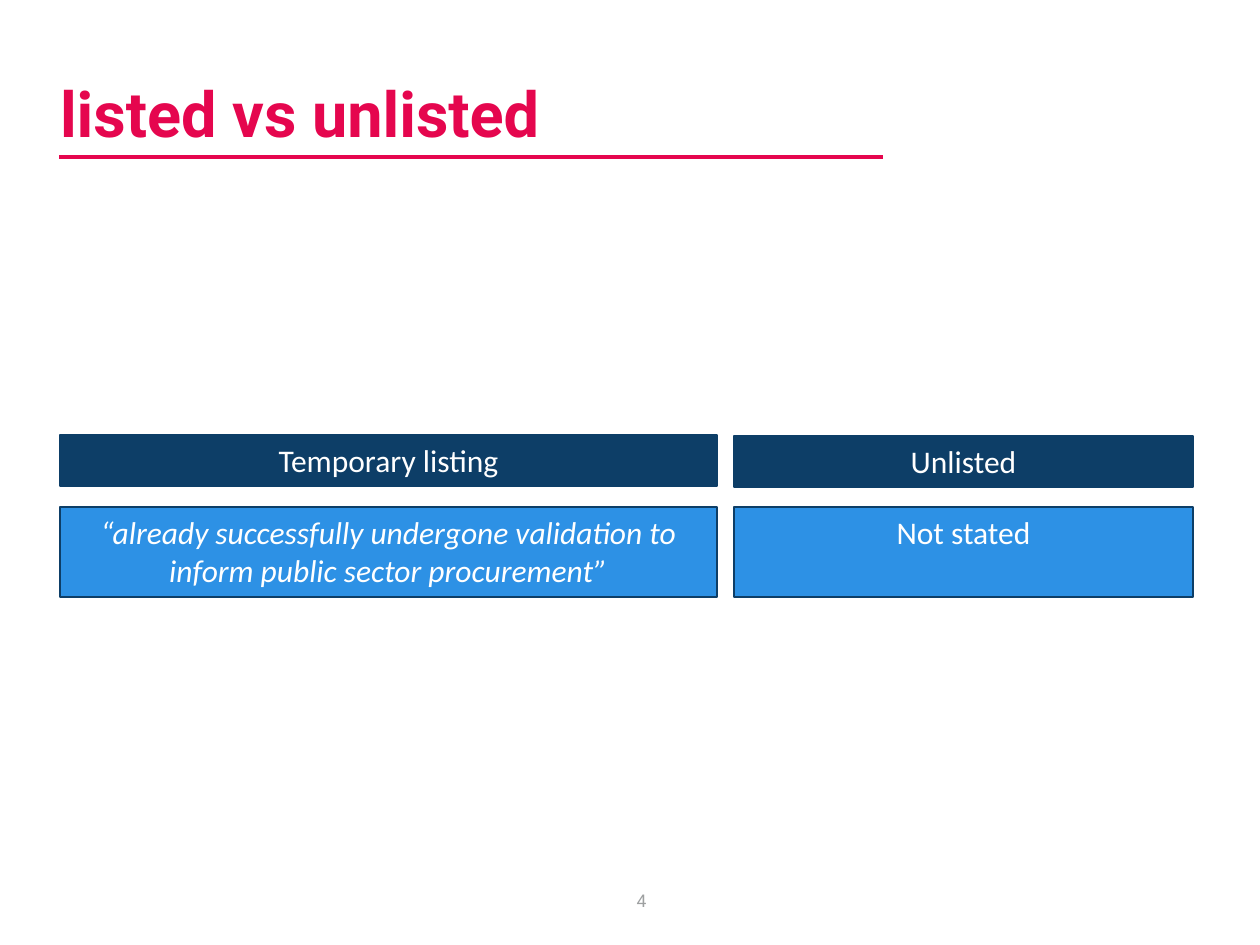
from dataclasses import dataclass

import pptx
import pptx.dml.color
import pptx.enum.shapes
import pptx.enum.text
import pptx.oxml
import pptx.oxml.ns
import pptx.util

PIXELS_PER_INCH = 126
ALIGN = pptx.enum.text.PP_ALIGN
ANCHOR = pptx.enum.text.MSO_ANCHOR


def px(length: int) -> pptx.util.Emu:
    return pptx.util.Emu(round(length * 914400 / PIXELS_PER_INCH))


def rgb(value: str) -> pptx.dml.color.RGBColor:
    return pptx.dml.color.RGBColor.from_string(value)


@dataclass(frozen=True)
class Theme:
    accent: str = "E5064E"
    navy: str = "0D3E67"
    blue: str = "2D91E5"
    white: str = "FFFFFF"
    grey: str = "9EA0A1"
    heading_font: str = "Roboto"
    body_font: str = "Calibri"
    title_size: int = 36
    body_size: int = 18
    number_size: int = 10
    rule_width: float = 2
    border_width: float = 0.75


@dataclass(frozen=True)
class Box:
    left: int
    top: int
    width: int
    height: int


@dataclass(frozen=True)
class Cell:
    text: str
    box: Box
    fill: str
    italic: bool = False


THEME = Theme()

# Two columns, each with a heading above a statement
LEFT, LEFT_WIDTH = 60, 657
RIGHT, RIGHT_WIDTH = 734, 459
HEADING_TOP, HEADING_HEIGHT = 435, 51
STATEMENT_TOP, STATEMENT_HEIGHT = 507, 90
CELLS = [
    Cell("Temporary listing", Box(LEFT, HEADING_TOP, LEFT_WIDTH, HEADING_HEIGHT), THEME.navy),
    Cell("Unlisted", Box(RIGHT, HEADING_TOP + 1, RIGHT_WIDTH, HEADING_HEIGHT), THEME.navy),
    Cell("“already successfully undergone validation to inform public sector procurement”",
         Box(LEFT, STATEMENT_TOP, LEFT_WIDTH, STATEMENT_HEIGHT), THEME.blue, italic=True),
    Cell("Not stated", Box(RIGHT, STATEMENT_TOP, RIGHT_WIDTH, STATEMENT_HEIGHT), THEME.blue),
]


def set_attributes(target, values: dict) -> None:
    for name, value in values.items():
        setattr(target, name, value)


def write_text(shape, text: str, color: str, frame_format: dict,
               paragraph_format: dict, font_format: dict) -> None:
    frame = shape.text_frame
    set_attributes(frame, {"word_wrap": True, **frame_format})
    paragraph = frame.paragraphs[0]
    set_attributes(paragraph, paragraph_format)
    run = paragraph.add_run()
    run.text = text
    set_attributes(run.font, font_format)
    run.font.color.rgb = rgb(color)


def add_text(slide, text: str, box: Box, color: str, frame_format: dict,
             paragraph_format: dict, font_format: dict) -> None:
    shape = slide.shapes.add_textbox(px(box.left), px(box.top), px(box.width), px(box.height))
    write_text(shape, text, color, frame_format, paragraph_format, font_format)


def add_cell(slide, cell: Cell) -> None:
    box = cell.box
    shape = slide.shapes.add_shape(
        pptx.enum.shapes.MSO_SHAPE.RECTANGLE,
        px(box.left), px(box.top), px(box.width), px(box.height))
    shape.shadow.inherit = False
    shape.fill.solid()
    shape.fill.fore_color.rgb = rgb(cell.fill)
    shape.line.color.rgb = rgb(THEME.navy)
    shape.line.width = pptx.util.Pt(THEME.border_width)
    write_text(shape, cell.text, THEME.white,
               {"vertical_anchor": ANCHOR.TOP},
               {"alignment": ALIGN.CENTER},
               {"name": THEME.body_font, "size": pptx.util.Pt(THEME.body_size),
                "italic": cell.italic})


def add_rule(slide, left: int, right: int, top: int) -> None:
    rule = slide.shapes.add_connector(
        pptx.enum.shapes.MSO_CONNECTOR.STRAIGHT, px(right), px(top), px(left), px(top))
    rule.line.color.rgb = rgb(THEME.accent)
    rule.line.width = pptx.util.Pt(THEME.rule_width)
    properties = rule._element.spPr
    properties.append(pptx.oxml.parse_xml(
        f"<a:effectLst {pptx.oxml.ns.nsdecls('a')}/>"))


def main() -> None:
    presentation = pptx.Presentation()
    presentation.slide_width = px(1260)
    presentation.slide_height = px(945)
    slide = presentation.slides.add_slide(presentation.slide_layouts[6])

    # Title and the rule below it
    add_rule(slide, 59, 883, 157)
    add_text(slide, "listed vs unlisted", Box(LEFT, 50, 824, 106), THEME.accent,
             {"vertical_anchor": ANCHOR.BOTTOM, "margin_left": 0, "margin_right": 0,
              "margin_top": px(5), "margin_bottom": px(5)},
             {"alignment": ALIGN.LEFT, "line_spacing": 0.9},
             {"name": THEME.heading_font, "size": pptx.util.Pt(THEME.title_size), "bold": True})

    # Slide number
    add_text(slide, "4", Box(614, 876, 55, 50), THEME.grey,
             {"vertical_anchor": ANCHOR.MIDDLE},
             {"alignment": ALIGN.CENTER},
             {"name": THEME.heading_font, "size": pptx.util.Pt(THEME.number_size)})

    # Comparison
    for cell in CELLS:
        add_cell(slide, cell)

    presentation.save("out.pptx")


if __name__ == "__main__":
    main()
